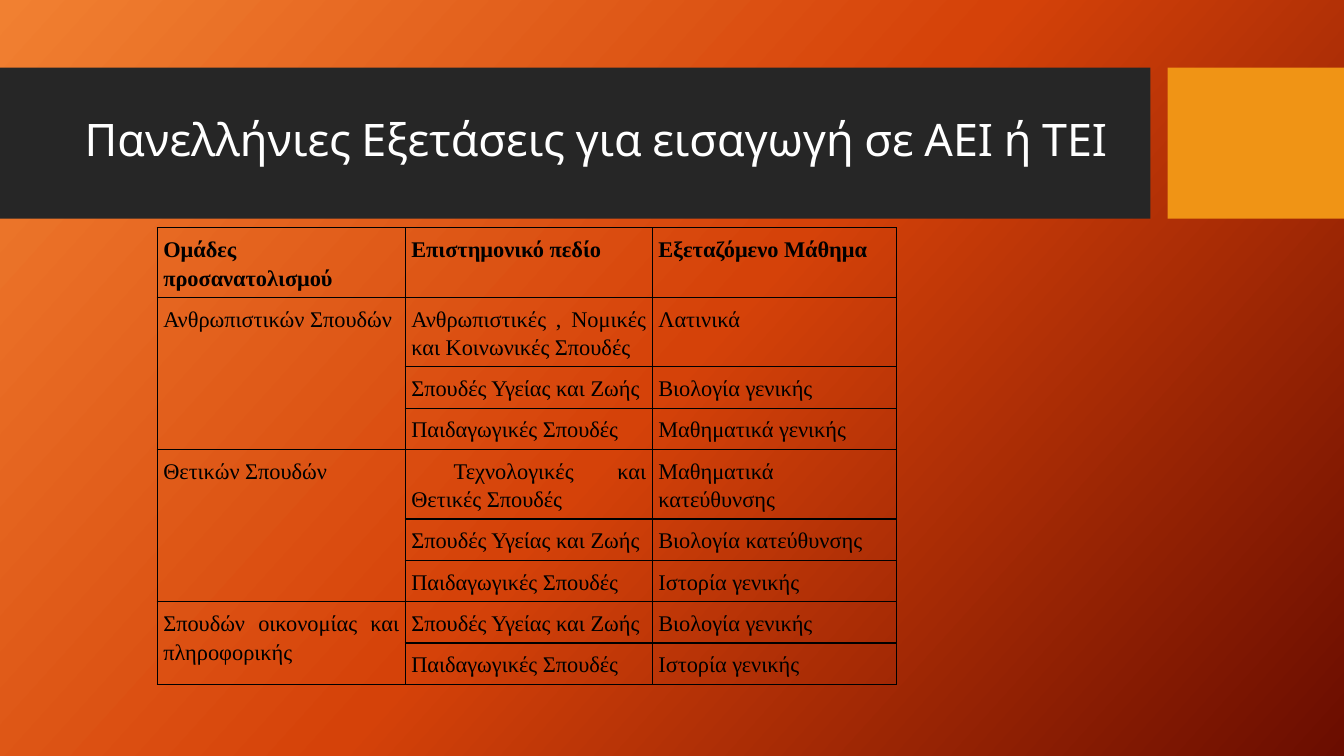
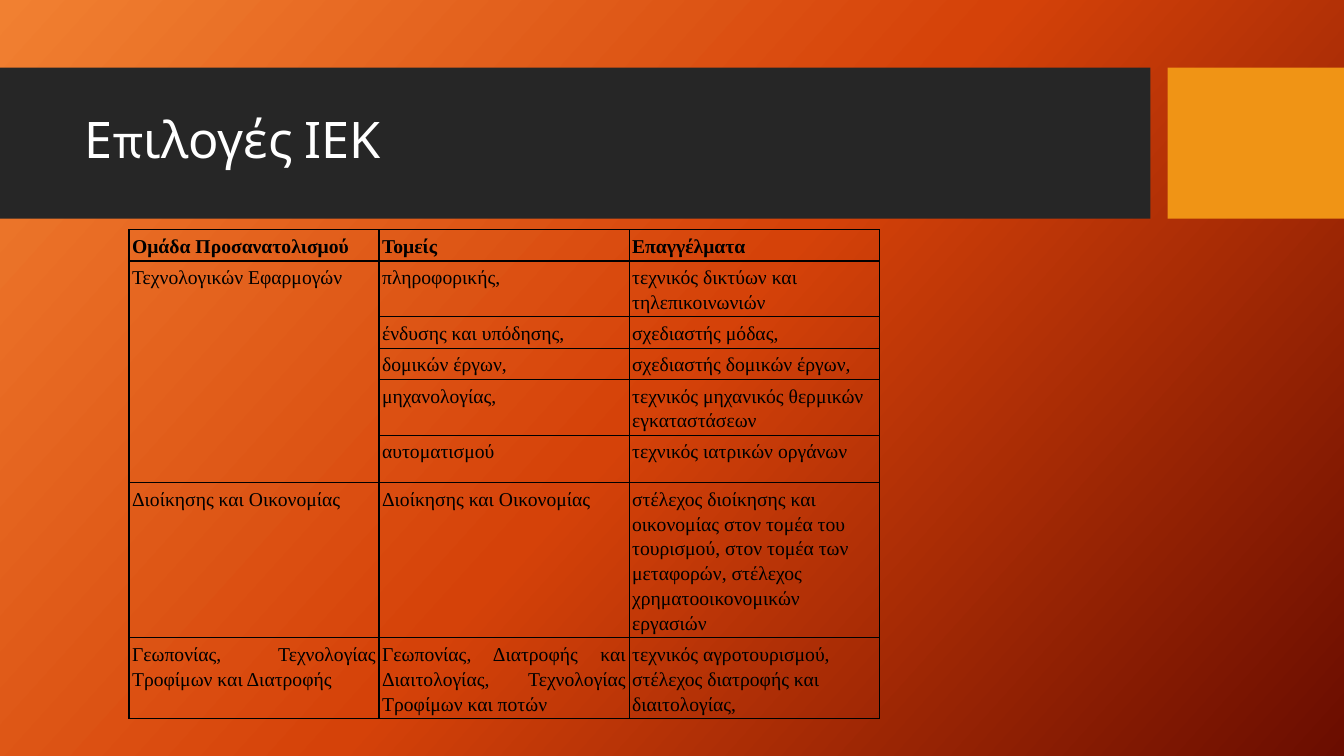
from pptx import Presentation
from pptx.dml.color import RGBColor
from pptx.enum.dml import MSO_THEME_COLOR
from pptx.enum.shapes import MSO_SHAPE
from pptx.enum.text import MSO_ANCHOR, MSO_AUTO_SIZE, PP_ALIGN
from pptx.oxml import parse_xml
from pptx.oxml.ns import nsdecls, qn
from pptx.util import Inches, Pt

RECT = MSO_SHAPE.RECTANGLE
MIDDLE = MSO_ANCHOR.MIDDLE
NO_AUTOFIT = MSO_AUTO_SIZE.NONE
LEFT, JUSTIFY = PP_ALIGN.LEFT, PP_ALIGN.JUSTIFY

BLACK = RGBColor(0x00, 0x00, 0x00)
WHITE = RGBColor(0xFF, 0xFF, 0xFF)
CHARCOAL = RGBColor(0x26, 0x26, 0x26)
AMBER = RGBColor(0xF0, 0x94, 0x15)
GRADIENT = [
    (0, RGBColor(0xF1, 0x80, 0x31)),
    (50, RGBColor(0xD5, 0x42, 0x09)),
    (100, RGBColor(0x6A, 0x0D, 0x00)),
]
GRADIENT_ANGLE = 42
TITLE_FONT, TABLE_FONT = "Karla", "Times New Roman"
PLAIN_TABLE_STYLE = "{2D5ABB26-0587-4C30-8999-92F81FD0307C}"
TITLE_LAYOUT = 5

# Bands behind the title: left, width, colour
BAND_TOP, BAND_HEIGHT = 0.67, 1.5
BANDS = [(0, 11.41, CHARCOAL), (11.58, 1.75, AMBER)]

# Content: a row without its first entry (None) continues the group above
SLIDES = [
    {
        "title": "Πανελλήνιες Εξετάσεις για εισαγωγή σε ΑΕΙ ή ΤΕΙ",
        "title_size": 32,
        "at": (1.56, 2.26),
        "cols": [2.46, 2.45, 2.42],
        "row_heights": [0.69, 0.69, 0.41, 0.41, 0.69, 0.41, 0.41, 0.41, 0.41],
        "size": 16,
        "margin": 0.06,
        "left_cols": [],
        "indents": {(4, 1): 0.42},
        "rows": [
            ("Ομάδες προσανατολισμού", "Επιστημονικό πεδίο", "Εξεταζόμενο Μάθημα"),
            ("Ανθρωπιστικών Σπουδών",
             "Ανθρωπιστικές , Νομικές και Κοινωνικές Σπουδές", "Λατινικά"),
            (None, "Σπουδές Υγείας και Ζωής", "Βιολογία γενικής"),
            (None, "Παιδαγωγικές Σπουδές", "Μαθηματικά γενικής"),
            ("Θετικών Σπουδών", "Τεχνολογικές και Θετικές Σπουδές",
             "Μαθηματικά κατεύθυνσης"),
            (None, "Σπουδές Υγείας και Ζωής", "Βιολογία κατεύθυνσης"),
            (None, "Παιδαγωγικές Σπουδές", "Ιστορία γενικής"),
            ("Σπουδών οικονομίας και πληροφορικής", "Σπουδές Υγείας και Ζωής",
             "Βιολογία γενικής"),
            (None, "Παιδαγωγικές Σπουδές", "Ιστορία γενικής"),
        ],
    },
    {
        "title": "Επιλογές ΙΕΚ",
        "title_size": 36,
        "at": (1.28, 2.28),
        "cols": [2.48, 2.48, 2.48],
        "row_heights": [0.31, 0.55, 0.31, 0.31, 0.55, 0.47, 1.54, 0.78],
        "size": 14,
        "margin": 0.03,
        "left_cols": [2],
        "indents": {},
        "rows": [
            ("Ομάδα Προσανατολισμού", "Τομείς", "Επαγγέλματα"),
            ("Τεχνολογικών Εφαρμογών", "πληροφορικής,",
             "τεχνικός δικτύων και τηλεπικοινωνιών"),
            (None, "ένδυσης και υπόδησης,", "σχεδιαστής μόδας,"),
            (None, "δομικών έργων,", "σχεδιαστής δομικών έργων,"),
            (None, "μηχανολογίας,", "τεχνικός μηχανικός θερμικών εγκαταστάσεων"),
            (None, "αυτοματισμού", "τεχνικός ιατρικών οργάνων"),
            ("Διοίκησης και Οικονομίας", "Διοίκησης και Οικονομίας",
             "στέλεχος διοίκησης και οικονομίας στον τομέα του τουρισμού, "
             "στον τομέα των μεταφορών, στέλεχος χρηματοοικονομικών εργασιών"),
            ("Γεωπονίας, Τεχνολογίας Τροφίμων και Διατροφής",
             "Γεωπονίας, Διατροφής και Διαιτολογίας, Τεχνολογίας Τροφίμων και ποτών",
             "τεχνικός αγροτουρισμού, στέλεχος διατροφής και διαιτολογίας,"),
        ],
    },
]


def set_background(master):
    fill = master.background.fill
    fill.gradient()
    gs_list = next(master.element.iter(qn("a:gsLst")))
    for gs in list(gs_list):
        gs_list.remove(gs)
    for pos, color in GRADIENT:
        gs_list.append(parse_xml(
            f'<a:gs {nsdecls("a")} pos="{pos * 1000}"><a:srgbClr val="{color}"/></a:gs>'))
    fill.gradient_angle = 360 - GRADIENT_ANGLE


def add_layout_bands(slide, layout):
    """Draw the bands, then move them behind everything on the layout."""
    for i, (left, width, color) in enumerate(BANDS):
        sp = slide.shapes.add_shape(RECT, Inches(left), Inches(BAND_TOP),
                                    Inches(width), Inches(BAND_HEIGHT))
        sp.shadow.inherit = False
        sp.fill.solid()
        sp.fill.fore_color.rgb = color
        sp.line.fill.background()
        layout.shapes.element.insert(2 + i, sp.element)


def set_font(p, name, size, color, bold=False):
    p.font.name = name
    p.font.size = Pt(size)
    p.font.color.rgb = color
    p.font.bold = bold


def set_title(slide, text, size):
    title = slide.shapes.title
    title.left, title.top = Inches(0.74), Inches(0.82)
    title.width, title.height = Inches(10.51), Inches(1.18)
    tf = title.text_frame
    tf.text = text
    tf.word_wrap = True
    tf.auto_size = NO_AUTOFIT
    tf.vertical_anchor = MIDDLE
    p = tf.paragraphs[0]
    p.alignment = LEFT
    p.line_spacing = 0.9
    set_font(p, TITLE_FONT, size, WHITE)


def format_cell(cell, margin):
    cell.margin_left = cell.margin_right = Inches(margin)
    cell.margin_top = cell.margin_bottom = Inches(margin)
    tc_pr = cell.fill and cell._tc.get_or_add_tcPr()
    for side in ("lnL", "lnR", "lnT", "lnB"):
        tc_pr.append(parse_xml(
            f'<a:{side} {nsdecls("a")} w="{Pt(1)}"><a:solidFill>'
            f'<a:srgbClr val="{BLACK}"/></a:solidFill></a:{side}>'))
    cell.fill.background()


def add_grouped_table(slide, data):
    rows, cols, heights = data["rows"], data["cols"], data["row_heights"]
    left, top = data["at"]
    frame = slide.shapes.add_table(
        len(rows), len(cols), Inches(left), Inches(top),
        Inches(sum(cols)), Inches(sum(heights)))
    next(frame.element.iter(qn("a:tableStyleId"))).text = PLAIN_TABLE_STYLE
    table = frame.table
    table.first_row = table.horz_banding = False
    for column, width in zip(table.columns, cols):
        column.width = Inches(width)
    for row, height in zip(table.rows, heights):
        row.height = Inches(height)

    for r, texts in enumerate(rows):
        for c, text in enumerate(texts):
            cell = table.cell(r, c)
            format_cell(cell, data["margin"])
            if text is None:
                continue
            cell.text = text
            p = cell.text_frame.paragraphs[0]
            p.alignment = LEFT if c in data["left_cols"] else JUSTIFY
            p.line_spacing = 1.15
            p.space_after = Pt(10)
            if (r, c) in data["indents"]:
                p._p.get_or_add_pPr().set("indent", str(Inches(data["indents"][r, c])))
            set_font(p, TABLE_FONT, data["size"], BLACK, bold=r == 0)

    # Merge each group name over its rows
    starts = [r for r, texts in enumerate(rows) if texts[0] is not None]
    for start, end in zip(starts, starts[1:] + [len(rows)]):
        if end - start > 1:
            table.cell(start, 0).merge(table.cell(end - 1, 0))


def main():
    prs = Presentation()
    prs.slide_width, prs.slide_height = Inches(13.33), Inches(7.5)
    layout = prs.slide_layouts[TITLE_LAYOUT]
    set_background(prs.slide_master)
    for i, data in enumerate(SLIDES):
        slide = prs.slides.add_slide(layout)
        if i == 0:
            add_layout_bands(slide, layout)
        set_title(slide, data["title"], data["title_size"])
        add_grouped_table(slide, data)
    prs.save("out.pptx")


if __name__ == "__main__":
    main()
